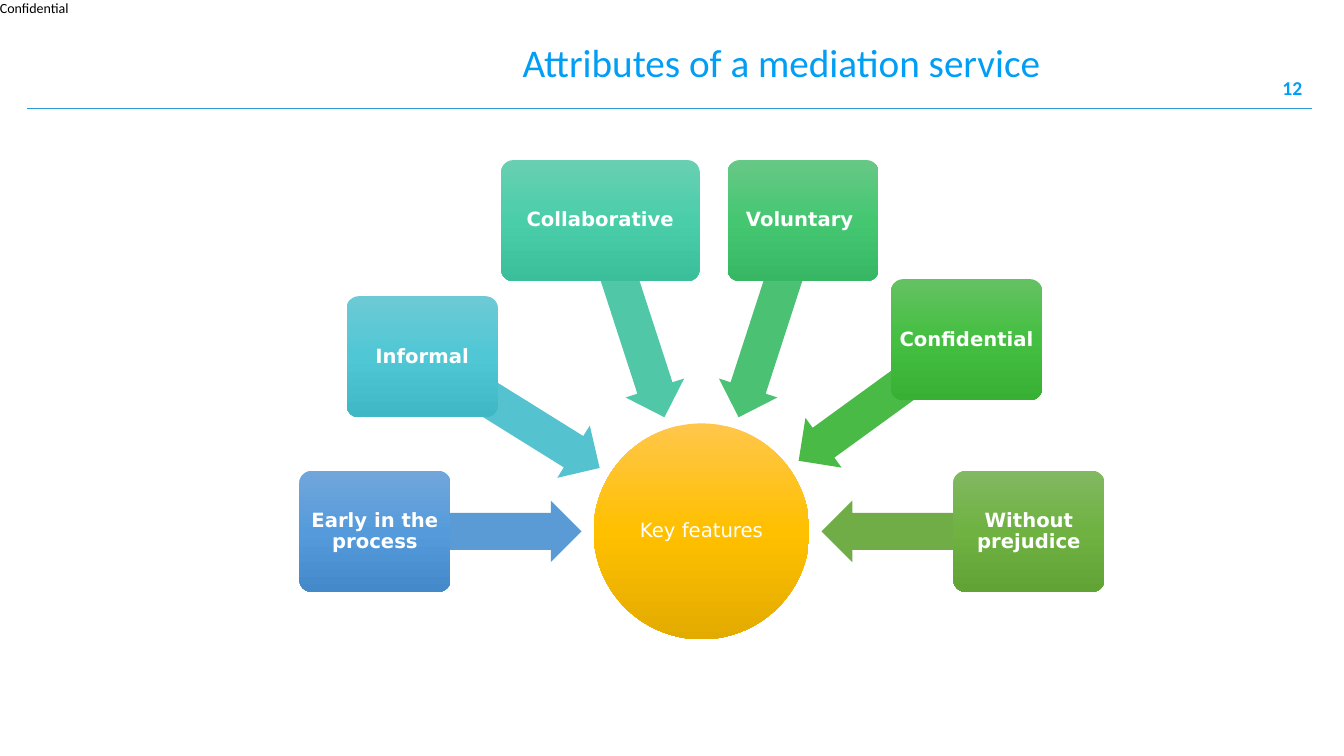
from copy import deepcopy
from math import cos, radians, sin

from lxml import etree
from pptx import Presentation
from pptx import util as u
from pptx.dml.color import RGBColor
from pptx.enum import shapes, text
from pptx.oxml.ns import qn

ACCENT = "019EF5"
WHITE = "FFFFFF"
LABEL_FONT = "DejaVu Sans"
HUB_X, HUB_Y, HUB_SIZE = 17.68, 13.39, 5.44
ARROW_ORBIT, ARROW_LENGTH, ARROW_WIDTH = 5.63, 5.21, 1.55
CARD_WIDTH, CARD_HEIGHT = 3.81, 3.05

FEATURES = [
    ("Early in the process", 9.45, 13.39, CARD_WIDTH, 180, "5B9BD5", ("71A6DB", "559BDB", "448ACA")),
    ("Informal", 10.64, 8.99, CARD_WIDTH, 211.9, "55C3CF", ("6DCAD5", "4FC7D5", "3FB7C4")),
    ("Collaborative", 15.13, 5.56, 5.0, 252, "50C8A7", ("69CFB1", "4ACEAA", "3BBE9A")),
    ("Voluntary ", 20.24, 5.56, CARD_WIDTH, 288, "4BC174", ("66C885", "45C772", "37B764")),
    ("Confidential", 24.36, 8.56, CARD_WIDTH, 324, "4ABA46", ("64C162", "44BF41", "37B034")),
    ("Without prejudice", 25.93, 13.39, CARD_WIDTH, 0, "70AD47", ("81B861", "6FB242", "62A336")),
]


def colour(value):
    return RGBColor.from_string(value)


def write(frame, words, size=14, font=LABEL_FONT, ink=WHITE, bold=False,
          align=text.PP_ALIGN.CENTER, anchor=text.MSO_ANCHOR.MIDDLE,
          spacing=0.9, inset=None, wrap=True, fit=text.MSO_AUTO_SIZE.NONE):
    frame.word_wrap = wrap
    frame.auto_size = fit
    frame.vertical_anchor = anchor
    if inset is not None:
        frame.margin_left = frame.margin_right = u.Cm(inset)
        frame.margin_top = frame.margin_bottom = u.Cm(inset)
    frame.text = words
    paragraph = frame.paragraphs[0]
    paragraph.alignment = align
    paragraph.line_spacing = spacing
    paragraph.space_before = u.Pt(0)
    run = paragraph.runs[0]
    run.font.size = u.Pt(size)
    run.font.name = font
    run.font.bold = bold
    run.font.color.rgb = colour(ink)


class Deck:
    def __init__(self):
        self.presentation = Presentation()
        self.presentation.slide_width = u.Cm(33.87)
        self.presentation.slide_height = u.Cm(19.05)
        self.slide = self.presentation.slides.add_slide(self.presentation.slide_layouts[5])

    def title(self, words, left, top, width, height):
        heading = self.slide.shapes.title
        heading.left, heading.top = u.Cm(left), u.Cm(top)
        heading.width, heading.height = u.Cm(width), u.Cm(height)
        write(heading.text_frame, words, size=28, font="Calibri", ink=ACCENT,
              anchor=text.MSO_ANCHOR.TOP, spacing=0.85)

    def label(self, words, left, top, width, height, **style):
        box = self.slide.shapes.add_textbox(u.Cm(left), u.Cm(top), u.Cm(width), u.Cm(height))
        write(box.text_frame, words, font="Calibri", spacing=1.0, **style)

    def rule(self, left, right, y, ink, weight):
        line = self.slide.shapes.add_connector(
            shapes.MSO_CONNECTOR.STRAIGHT, u.Cm(left), u.Cm(y), u.Cm(right), u.Cm(y))
        line.line.color.rgb = colour(ink)
        line.line.width = u.Pt(weight)
        etree.SubElement(line.element.spPr, qn("a:effectLst"))

    def centred(self, kind, x, y, width, height, adjustments=()):
        shape = self.slide.shapes.add_shape(
            kind, u.Cm(x - width / 2), u.Cm(y - height / 2), u.Cm(width), u.Cm(height))
        shape.shadow.inherit = False
        shape.line.fill.background()
        for index, value in enumerate(adjustments):
            shape.adjustments[index] = value
        return shape

    def node(self, kind, words, x, y, width, height, shades, adjustments=(), **style):
        node = self.centred(kind, x, y, width, height, adjustments)
        node.fill.gradient()
        node.fill.gradient_angle = 270
        stops = node.element.spPr.find(qn("a:gradFill")).find(qn("a:gsLst"))
        stops.append(deepcopy(stops[0]))
        for stop, shade, position in zip(node.fill.gradient_stops, shades, (0, 0.5, 1)):
            stop.color.rgb = colour(shade)
            stop.position = position
        write(node.text_frame, words, **style)

    def arrow_to_hub(self, angle, fill):
        x = HUB_X + ARROW_ORBIT * cos(radians(angle))
        y = HUB_Y + ARROW_ORBIT * sin(radians(angle))
        arrow = self.centred(shapes.MSO_SHAPE.LEFT_ARROW, x, y, ARROW_LENGTH, ARROW_WIDTH, (0.6, 0.5))
        arrow.rotation = angle
        arrow.fill.solid()
        arrow.fill.fore_color.rgb = colour(fill)


def main():
    deck = Deck()
    deck.rule(0.69, 33.07, 2.72, "2B9BD7", 0.5)
    deck.label("Confidential", 0, 0, 1.83, 0.43, size=10, ink="000000", inset=0, wrap=False,
               align=text.PP_ALIGN.LEFT, anchor=text.MSO_ANCHOR.TOP,
               fit=text.MSO_AUTO_SIZE.SHAPE_TO_FIT_TEXT)
    deck.title("Attributes of a mediation service", 7.09, 1.02, 25.2, 3.68)
    deck.node(shapes.MSO_SHAPE.OVAL, "Key features", HUB_X, HUB_Y, HUB_SIZE, HUB_SIZE,
              ("FFC64B", "FFC000", "E3AB00"), inset=0.03)
    for words, x, y, width, angle, arrow_fill, shades in FEATURES:
        deck.arrow_to_hub(angle, arrow_fill)
        deck.node(shapes.MSO_SHAPE.ROUNDED_RECTANGLE, words, x, y, width, CARD_HEIGHT,
                  shades, (0.1,), bold=True, inset=0.08)
    deck.label("12", 25.45, 1.7, 7.62, 1.02, ink=ACCENT, bold=True, align=text.PP_ALIGN.RIGHT)
    deck.presentation.save("out.pptx")


if __name__ == "__main__":
    main()
